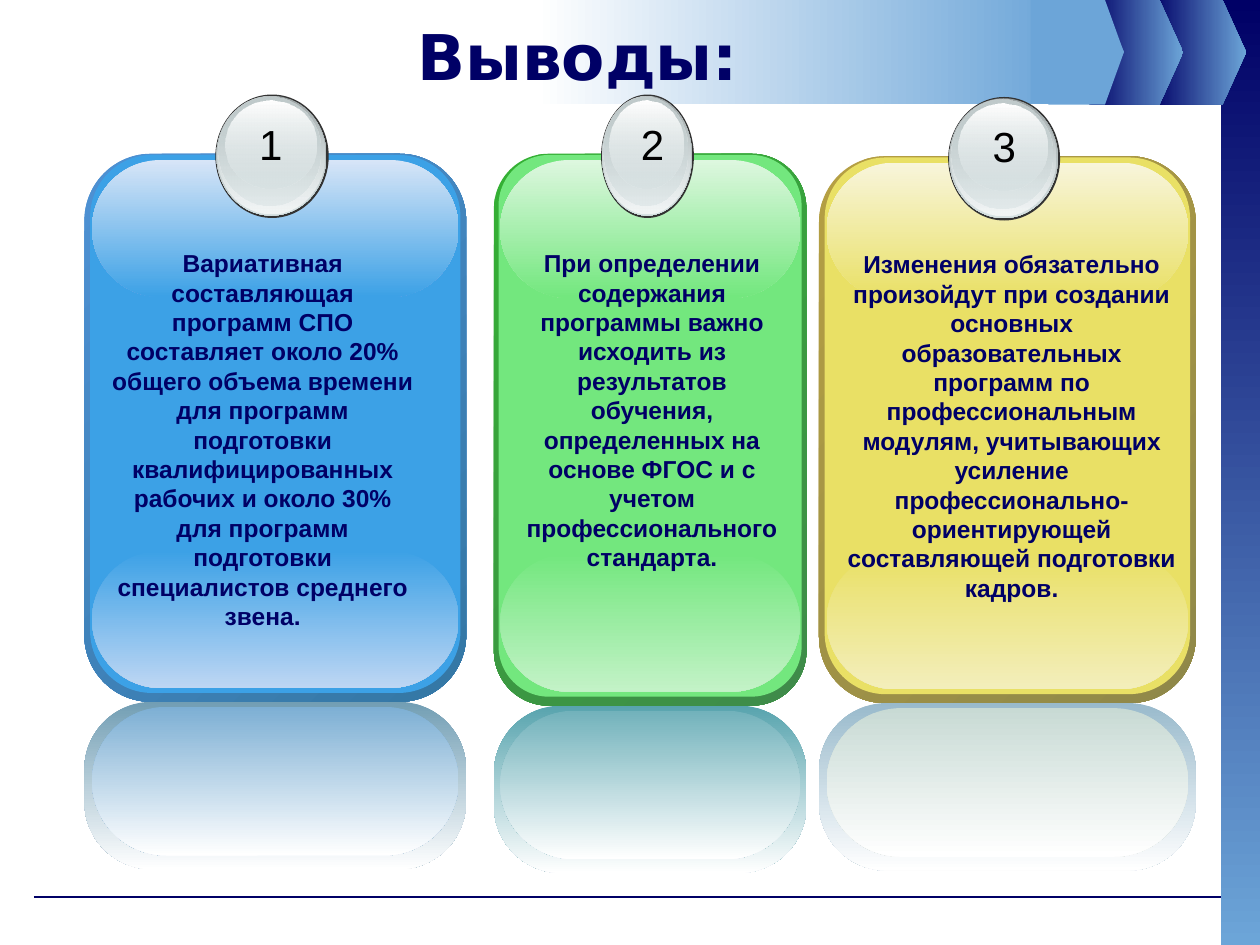
from lxml import etree
from pptx import Presentation
from pptx import util as u
from pptx.dml.color import RGBColor
from pptx.enum import shapes, text
from pptx.oxml.ns import qn

THEME = {
    "navy": "000066", "sky": "6CA5D8", "white": "FFFFFF", "black": "000000",
    "rim": "333333", "steel": "99A1A2", "grey": "C1CBCC", "silver": "D6E1E2", "pale": "F2F5F5",
    "title_font": "DejaVu Sans", "body_font": "Arial",
    "title_size": 36, "number_size": 24, "body_size": 14,
}
SHAPE = shapes.MSO_SHAPE


def add_shape(parent, kind, left, top, width, height, *colors, angle=90, adjust=None, alphas=(100, 100)):
    """Add a borderless shape with a solid fill (one colour) or a gradient (two colours)."""
    shape = parent.add_shape(kind, u.Inches(left), u.Inches(top), u.Inches(width), u.Inches(height))
    shape.shadow.inherit = False
    shape.line.fill.background()
    if adjust is not None:
        shape.adjustments[0] = adjust
    if len(colors) == 1:
        shape.fill.solid()
        shape.fill.fore_color.rgb = RGBColor.from_string(colors[0])
        return
    shape.fill.gradient()
    shape.fill.gradient_angle = 360 - angle
    for stop, color, alpha in zip(shape.fill.gradient_stops, colors, alphas):
        stop.color.rgb = RGBColor.from_string(color)
        if alpha < 100:
            srgb = next(shape._element.iter(qn("a:gradFill"))).findall(".//" + qn("a:srgbClr"))[-1]
            if stop is not None and color == colors[0] and alpha == alphas[0]:
                srgb = next(shape._element.iter(qn("a:srgbClr")))
            etree.SubElement(srgb, qn("a:alpha")).set("val", str(alpha * 1000))


def write_text(box, content, size, font, color, bold=False, anchor=text.MSO_ANCHOR.TOP):
    """Write one centred paragraph into a text box or placeholder."""
    frame = box.text_frame
    frame.word_wrap = True
    frame.vertical_anchor = anchor
    para = frame.paragraphs[0]
    para.alignment = text.PP_ALIGN.CENTER
    span = para.add_run()
    span.text = content
    span.font.size = u.Pt(size)
    span.font.name = font
    span.font.bold = bold
    span.font.color.rgb = RGBColor.from_string(color)


deck = Presentation()
deck.slide_width, deck.slide_height = u.Inches(10), u.Inches(7.5)
page = deck.slides.add_slide(deck.slide_layouts[5])

# Footer rule
rule = page.shapes.add_connector(shapes.MSO_CONNECTOR.STRAIGHT,
                                 u.Inches(0.27), u.Inches(7.12), u.Inches(9.69), u.Inches(7.12))
rule.line.color.rgb = RGBColor.from_string(THEME["navy"])
rule.line.width = u.Pt(0.75)
etree.SubElement(rule._element.spPr, qn("a:effectLst"))

# Side bar, arrows and title band
add_shape(page.shapes, SHAPE.RECTANGLE, 9.69, 0, 0.31, 7.5, THEME["navy"], THEME["sky"])
for arrow_left in (9.14, 8.64):
    add_shape(page.shapes, SHAPE.PENTAGON, arrow_left, 0, 0.75, 0.83,
              THEME["navy"], THEME["sky"], angle=0, adjust=0.25)
add_shape(page.shapes, SHAPE.PENTAGON, 8.32, 0, 0.6, 0.83, THEME["sky"], adjust=0.25)
add_shape(page.shapes, SHAPE.RECTANGLE, 4.25, 0, 4.18, 0.83, THEME["white"], THEME["sky"], angle=0)
add_shape(page.shapes, SHAPE.PENTAGON, 8.18, 0, 0.74, 0.82, THEME["sky"], adjust=0.25)

# Title, brought in front of the band
title = page.shapes.title
title.left, title.top, title.width, title.height = (u.Inches(n) for n in (0.5, 0.13, 8.17, 0.62))
write_text(title, "Выводы:", THEME["title_size"], THEME["title_font"], THEME["navy"],
           bold=True, anchor=text.MSO_ANCHOR.MIDDLE)
title._element.getparent().append(title._element)

# Cards: frame, face, edge and foot colours, number place, text place, text
cards = [
    {"frame": (0.67, 1.22, 3.03, 4.35), "edge": ("4E91D4", "3477A4"), "face": "3CA1E6",
     "gloss": ("D7E5F7", "BDD6F3"), "mirror": ("729EB4", "7DAFD4"),
     "number": (1.9, 0.89), "body": (0.76, 1.92, 2.65, 2.69),
     "text": "Вариативная составляющая программ СПО составляет около 20% общего объема времени "
             "для программ подготовки квалифицированных рабочих и около 30% для программ "
             "подготовки специалистов среднего звена."},
    {"frame": (3.92, 1.22, 2.48, 4.38), "edge": ("34B034", "3F8B4A"), "face": "73E77E",
     "gloss": ("DDF7DF", "C3F2C7"), "mirror": ("58A4AE", "72B2BB"),
     "number": (4.93, 0.89), "body": (4, 1.92, 2.35, 2.93),
     "text": "При определении содержания программы важно исходить из результатов обучения, "
             "определенных на основе ФГОС и с учетом профессионального стандарта."},
    {"frame": (6.5, 1.24, 2.99, 4.34), "edge": ("B59F43", "8F8849"), "face": "E9E065",
     "gloss": ("F8F5DB", "F3EEBB"), "mirror": ("99BACC", "C8DAD4"),
     "number": (7.72, 0.91), "body": (6.61, 1.93, 2.84, 2.93),
     "text": "Изменения обязательно произойдут при создании основных образовательных программ "
             "по профессиональным модулям, учитывающих усиление "
             "профессионально-ориентирующей составляющей подготовки кадров."},
]

# Badge layers: left, top, width, height as shares of the badge, then colours and opacity
rings = [
    (0, 0, 1, 1, (THEME["rim"],), (100, 100)),
    (0.01, 0.01, 0.97, 0.97, (THEME["steel"], THEME["silver"]), (100, 100)),
    (0.02, 0.01, 0.94, 0.95, (THEME["silver"], THEME["pale"]), (0, 100)),
    (0.03, 0.02, 0.9, 0.88, (THEME["grey"], THEME["silver"]), (100, 48)),
    (0.09, 0.05, 0.8, 0.71, (THEME["white"], THEME["silver"]), (100, 38)),
]

for number, card in enumerate(cards, start=1):
    group = page.shapes.add_group_shape().shapes
    left, top, width, height = card["frame"]
    bottom = top + height
    gloss_left, gloss_width, gloss_height = left + 0.02 * width, 0.96 * width, 0.25 * height
    light, foot = card["gloss"]

    # Body with glossy top and bottom
    add_shape(group, SHAPE.ROUNDED_RECTANGLE, left, top, width, height,
              *card["edge"], angle=45, adjust=0.175)
    add_shape(group, SHAPE.ROUNDED_RECTANGLE, left + 0.015 * width, top + 0.01, 0.97 * width,
              height - 0.08, card["face"], adjust=0.167)
    add_shape(group, SHAPE.ROUNDED_RECTANGLE, gloss_left, bottom - 0.11 - gloss_height,
              gloss_width, gloss_height, card["face"], foot, adjust=0.5)
    add_shape(group, SHAPE.ROUNDED_RECTANGLE, gloss_left, top + 0.05, gloss_width, gloss_height,
              light, card["face"], adjust=0.5)

    # Mirror image below
    outer, inner = card["mirror"]
    add_shape(group, SHAPE.ROUNDED_RECTANGLE, left, bottom, width, 1.33,
              outer, THEME["white"], adjust=0.404)
    add_shape(group, SHAPE.ROUNDED_RECTANGLE, gloss_left, bottom + 0.04, gloss_width, 1.18,
              inner, THEME["white"], adjust=0.5)

    # Numbered badge
    badge_left, badge_top = left + 0.343 * width, top - 0.47
    badge_width, badge_height = 0.297 * width, 0.98
    for x, y, w, h, colors, alphas in rings:
        add_shape(group, SHAPE.OVAL, badge_left + x * badge_width, badge_top + y * badge_height,
                  w * badge_width, h * badge_height, *colors, alphas=alphas)
    box = group.add_textbox(*(u.Inches(n) for n in (*card["number"], 0.5, 0.7)))
    write_text(box, str(number), THEME["number_size"], THEME["body_font"], THEME["black"])

    # Conclusion
    box = group.add_textbox(*(u.Inches(n) for n in card["body"]))
    write_text(box, card["text"], THEME["body_size"], THEME["body_font"], THEME["navy"], bold=True)

deck.save("out.pptx")
